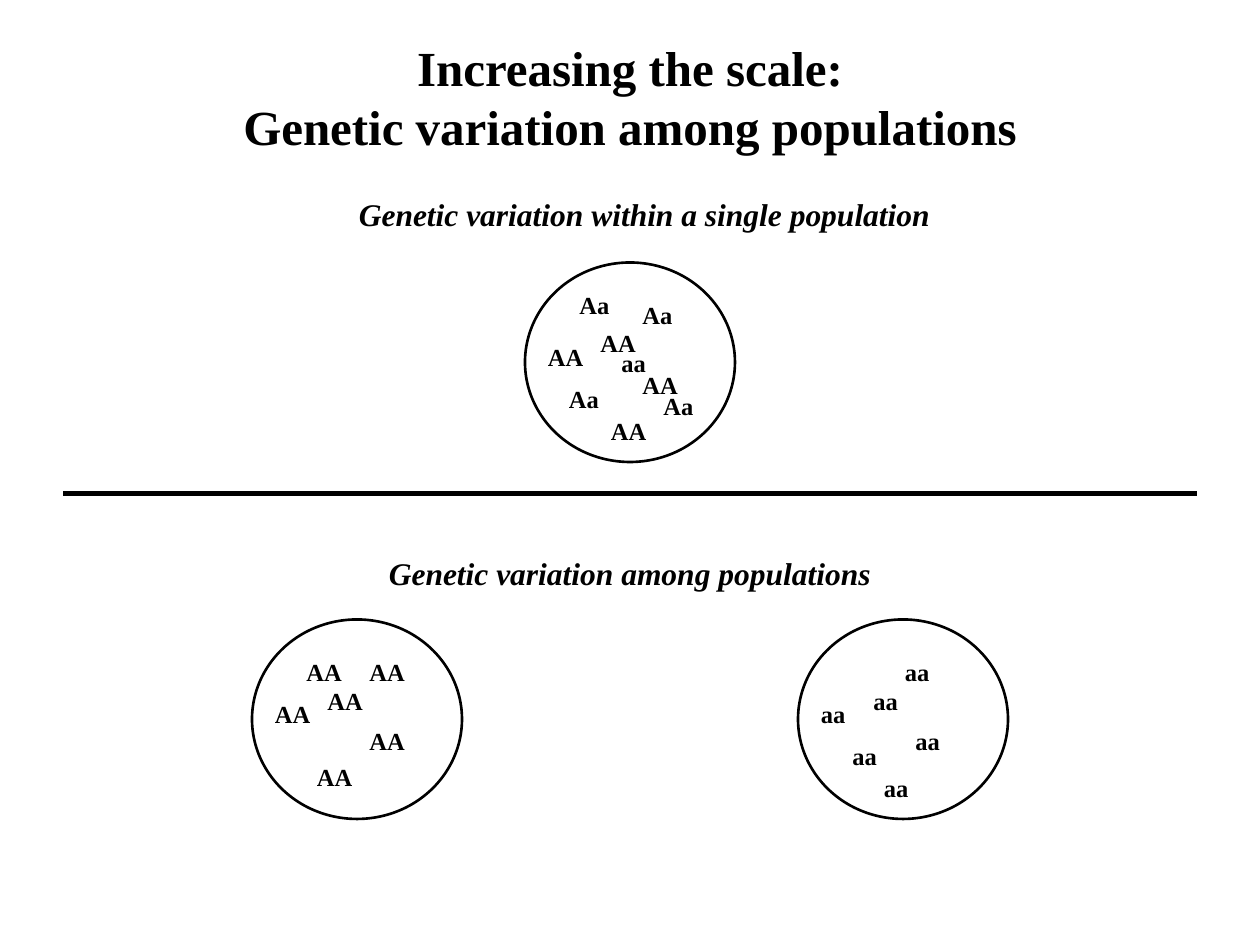
from dataclasses import dataclass

from lxml import etree
from pptx import Presentation
from pptx.dml.color import RGBColor
from pptx.enum.shapes import MSO_CONNECTOR, MSO_SHAPE
from pptx.enum.text import MSO_ANCHOR, MSO_AUTO_SIZE, PP_ALIGN
from pptx.oxml.ns import qn
from pptx.util import Emu, Inches, Pt

OVAL = MSO_SHAPE.OVAL
STRAIGHT = MSO_CONNECTOR.STRAIGHT
TOP = MSO_ANCHOR.TOP
FIT_SHAPE = MSO_AUTO_SIZE.SHAPE_TO_FIT_TEXT
LEFT, CENTER = PP_ALIGN.LEFT, PP_ALIGN.CENTER

COLORS = {"ink": "000000"}
FONT = "Times New Roman"
SLIDE_WIDTH, SLIDE_HEIGHT = Inches(10), Inches(7.5)
COLUMNS, ROWS = 120, 90
CIRCLE_COLUMNS, CIRCLE_ROWS = 20, 19
GENOTYPE_COLUMNS = {"AA": 5.8, "Aa": 5.3, "aa": 4.8}
GENOTYPE_ROWS = 4


@dataclass(frozen=True)
class Genotype:
    """An individual, placed in grid steps from its population's corner."""

    alleles: str
    column: float
    row: float


@dataclass(frozen=True)
class Population:
    """A circle of individuals, placed by its grid corner."""

    column: float
    row: float
    genotypes: tuple[Genotype, ...]


@dataclass(frozen=True)
class Heading:
    """A section heading and its place on the grid."""

    text: str
    column: float
    row: float
    columns: float
    wraps: bool
    alignment: PP_ALIGN


POPULATIONS = (
    Population(76, 59, (
        Genotype("aa", 6, 5.7), Genotype("aa", 10, 9.6), Genotype("aa", 7, 14),
        Genotype("aa", 1, 7), Genotype("aa", 4, 11), Genotype("aa", 9, 3),
    )),
    Population(50, 25, (
        Genotype("Aa", 4, 2), Genotype("AA", 6, 5.6), Genotype("aa", 8, 7.6),
        Genotype("AA", 10, 9.6), Genotype("Aa", 12, 11.6), Genotype("AA", 7, 14),
        Genotype("Aa", 3, 11), Genotype("Aa", 10, 3), Genotype("AA", 1, 7),
    )),
    Population(24, 59, (
        Genotype("AA", 6, 5.7), Genotype("AA", 1, 7), Genotype("AA", 5, 13),
        Genotype("AA", 10, 9.6), Genotype("AA", 10, 3), Genotype("AA", 4, 3),
    )),
)

HEADINGS = (
    Heading("Genetic variation within a single population", 33, 18, 56.9, False, LEFT),
    Heading("Genetic variation among populations", 0, 52.2, COLUMNS, True, CENTER),
)


def across(columns: float) -> Emu:
    """Convert grid columns to a length."""
    return Emu(round(SLIDE_WIDTH * columns / COLUMNS))


def down(rows: float) -> Emu:
    """Convert grid rows to a length."""
    return Emu(round(SLIDE_HEIGHT * rows / ROWS))


def write(frame, text: str, size: float, alignment: PP_ALIGN = LEFT,
          italic: bool = False, wraps: bool = False) -> None:
    """Fill a text frame with bold text."""
    frame.text = text
    frame.word_wrap = wraps
    frame.auto_size = FIT_SHAPE
    frame.vertical_anchor = TOP
    for paragraph in frame.paragraphs:
        paragraph.alignment = alignment
        for run in paragraph.runs:
            run.font.name = FONT
            run.font.size = Pt(size)
            run.font.bold = True
            run.font.italic = italic
            run.font.color.rgb = RGBColor.from_string(COLORS["ink"])


def draw_title(slide, text: str) -> None:
    """Place and format the slide's title."""
    title = slide.shapes.title
    title.left, title.top = across(0), down(3)
    title.width, title.height = across(COLUMNS), down(12.4)
    write(title.text_frame, text, 28, CENTER, wraps=True)


def draw_population(slide, population: Population) -> None:
    """Draw a population's circle and its genotypes."""
    circle = slide.shapes.add_shape(
        OVAL, across(population.column), down(population.row),
        across(CIRCLE_COLUMNS), down(CIRCLE_ROWS))
    circle.shadow.inherit = False
    circle.fill.background()
    circle.line.color.rgb = RGBColor.from_string(COLORS["ink"])
    circle.line.width = Pt(1.5)
    for genotype in population.genotypes:
        label = slide.shapes.add_textbox(
            across(population.column + genotype.column),
            down(population.row + genotype.row),
            across(GENOTYPE_COLUMNS[genotype.alleles]), down(GENOTYPE_ROWS))
        write(label.text_frame, genotype.alleles, 14)


def draw_divider(slide, row: float) -> None:
    """Draw the line between the two sections."""
    divider = slide.shapes.add_connector(
        STRAIGHT, across(6), down(row), across(COLUMNS - 6), down(row))
    divider.line.color.rgb = RGBColor.from_string(COLORS["ink"])
    divider.line.width = Pt(3)
    etree.SubElement(divider.element.spPr, qn("a:effectLst"))


def draw_heading(slide, heading: Heading) -> None:
    """Draw a section heading."""
    caption = slide.shapes.add_textbox(
        across(heading.column), down(heading.row), across(heading.columns), down(4.8))
    write(caption.text_frame, heading.text, 18, heading.alignment,
          italic=True, wraps=heading.wraps)


def main() -> None:
    """Build and save the slide."""
    presentation = Presentation()
    presentation.slide_width, presentation.slide_height = SLIDE_WIDTH, SLIDE_HEIGHT
    slide = presentation.slides.add_slide(presentation.slide_layouts[5])
    draw_title(slide, "Increasing the scale:\nGenetic variation among populations")
    for population in POPULATIONS:
        draw_population(slide, population)
    draw_divider(slide, 47)
    for heading in HEADINGS:
        draw_heading(slide, heading)
    presentation.save("out.pptx")


if __name__ == "__main__":
    main()
